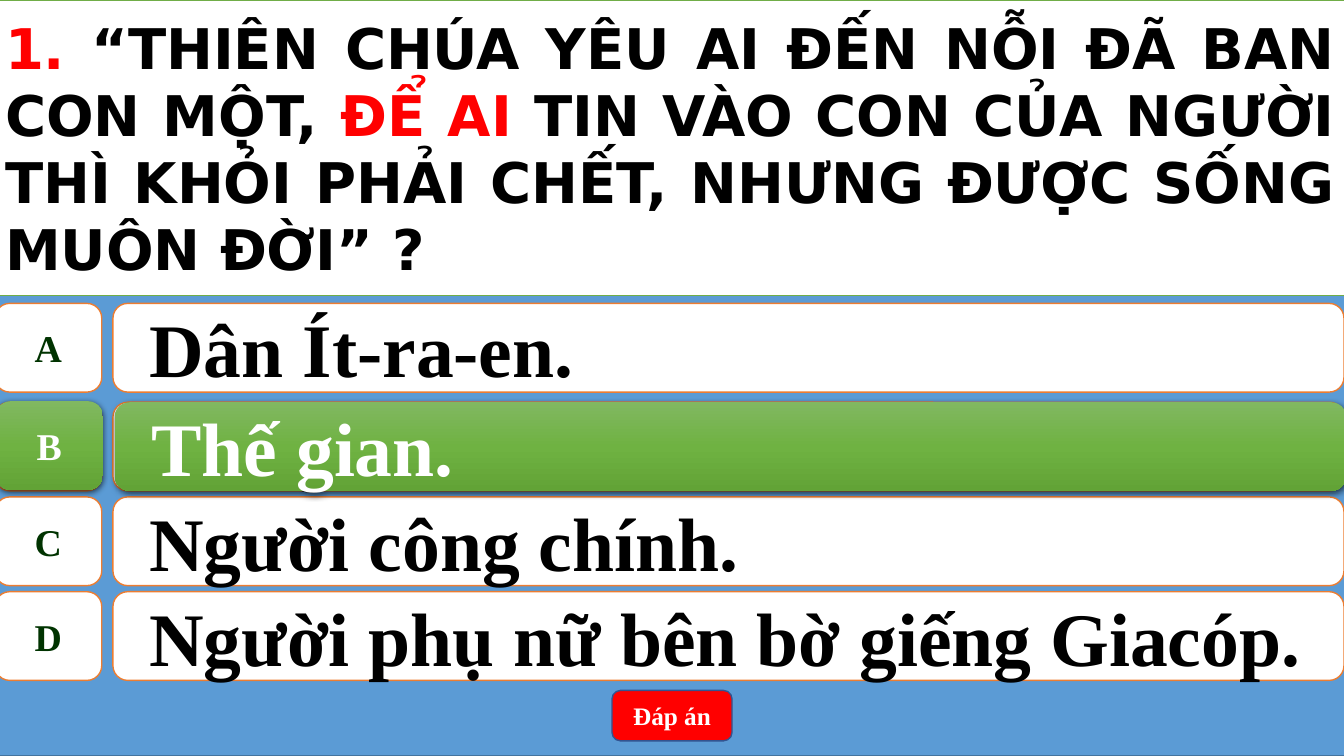
from lxml import etree
from pptx import Presentation
from pptx.dml.color import RGBColor
from pptx.enum.shapes import MSO_SHAPE as SHAPE
from pptx.enum.text import MSO_ANCHOR, MSO_AUTO_SIZE, PP_ALIGN as ALIGN
from pptx.oxml import parse_xml
from pptx.oxml.ns import nsdecls, qn
from pptx.util import Inches, Pt

SERIF, SANS = "Times New Roman", "DejaVu Sans"
WHITE, BLACK, RED, ORANGE = "FFFFFF", "000000", "FF0000", "ED7D31"
GREENS = [(0, "81B861"), (50, "6FB242"), (100, "62A336")]
QUESTION = [
    ("1. ", RED),
    ("“THIÊN CHÚA YÊU AI ĐẾN NỖI ĐÃ BAN CON MỘT, ", BLACK),
    ("ĐỂ AI ", RED),
    ("TIN VÀO CON CỦA NGƯỜI THÌ KHỎI PHẢI CHẾT, "
     "NHƯNG ĐƯỢC SỐNG MUÔN ĐỜI” ?", BLACK),
]
ANSWERS = [
    ("A", "Dân Ít-ra-en.", 3.01),
    ("B", "Thế gian.", 3.99),
    ("C", "Người công chính.", 4.93),
    ("D", "Người phụ nữ bên bờ giếng Giacóp.", 5.87),
]
CORRECT = ANSWERS[1]


def rgb(value):
    return RGBColor.from_string(value)


def paint(s, fill, line):
    s.fill.solid()
    s.fill.fore_color.rgb = rgb(fill)
    s.line.color.rgb = rgb(line)
    s.line.width = Pt(1)


def style_run(r, size, color, font=SERIF):
    r.font.size, r.font.bold, r.font.name = Pt(size), True, font
    r.font.color.rgb = rgb(color)


def add_box(slide, kind, left, top, width, height, fill, line):
    s = slide.shapes.add_shape(
        kind, Inches(left), Inches(top), Inches(width), Inches(height))
    s.shadow.inherit = False
    paint(s, fill, line)
    return s


def write(s, text, size, color, align=ALIGN.CENTER):
    tf = s.text_frame
    tf.vertical_anchor = MSO_ANCHOR.MIDDLE
    tf.text = text
    p = tf.paragraphs[0]
    p.alignment = align
    style_run(p.runs[0], size, color)
    return p


def make_glossy(s):
    """Give a box the green gradient and soft shadow of the correct answer."""
    s.line.fill.background()
    stops = "".join(f'<a:gs pos="{pos * 1000}"><a:srgbClr val="{color}"/></a:gs>'
                    for pos, color in GREENS)
    gradient = parse_xml(
        f'<a:gradFill {nsdecls("a")} rotWithShape="1"><a:gsLst>{stops}</a:gsLst>'
        '<a:lin ang="5400000" scaled="0"/></a:gradFill>')
    sp_pr = s._element.spPr
    sp_pr.replace(sp_pr.find(qn("a:solidFill")), gradient)
    shadow = etree.SubElement(
        sp_pr.find(qn("a:effectLst")), qn("a:outerShdw"), blurRad=str(Pt(4.5)),
        dist=str(Pt(1.5)), dir="5400000", algn="ctr", rotWithShape="0")
    color = etree.SubElement(shadow, qn("a:srgbClr"), val=BLACK)
    etree.SubElement(color, qn("a:alpha"), val="63000")


def add_answer(slide, letter, text, top, correct=False):
    shift = 0.01 if correct else 0
    key = add_box(slide, SHAPE.FLOWCHART_ALTERNATE_PROCESS,
                  -0.05 + shift, top - shift, 1.06, 0.88, WHITE, ORANGE)
    write(key, letter, 27, WHITE if correct else "003300")
    key.text_frame.word_wrap = False

    bar = add_box(slide, SHAPE.ROUNDED_RECTANGLE,
                  1.12 + 2 * shift, top, 12.21, 0.88, WHITE, ORANGE)
    p = write(bar, text, 54, WHITE if correct else BLACK, ALIGN.LEFT)
    p.level = 1
    p_pr = p._p.get_or_add_pPr()
    p_pr.set("marL", str(Inches(0.5)))
    p_pr.set("indent", str(Inches(-0.28)))
    if correct:
        make_glossy(key)
        make_glossy(bar)


def set_question(slide):
    title = slide.shapes.title
    title.left, title.top = Inches(-0.05), Inches(0)
    title.width, title.height = Inches(13.39), Inches(2.93)
    paint(title, WHITE, "70AD47")
    tf = title.text_frame
    tf.word_wrap, tf.auto_size = True, MSO_AUTO_SIZE.NONE
    tf.vertical_anchor = MSO_ANCHOR.MIDDLE
    p = tf.paragraphs[0]
    p.alignment = ALIGN.JUSTIFY
    for text, color in QUESTION:
        r = p.add_run()
        r.text = text
        style_run(r, 40, color, SANS)
    # Bring the question in front of the backdrop
    slide.shapes._spTree.append(title._element)


def main():
    prs = Presentation()
    prs.slide_width, prs.slide_height = Inches(13.33), Inches(7.5)
    slide = prs.slides.add_slide(prs.slide_layouts[5])
    add_box(slide, SHAPE.RECTANGLE, -0.05, 0, 13.39, 7.5, "5B9BD5", "43739E")
    for answer in ANSWERS:
        add_answer(slide, *answer)
    button = add_box(slide, SHAPE.ROUNDED_RECTANGLE,
                     6.07, 6.85, 1.19, 0.5, RED, "325491")
    write(button, "Đáp án", 18, WHITE)
    add_answer(slide, *CORRECT, correct=True)
    set_question(slide)
    prs.save("out.pptx")


if __name__ == "__main__":
    main()
